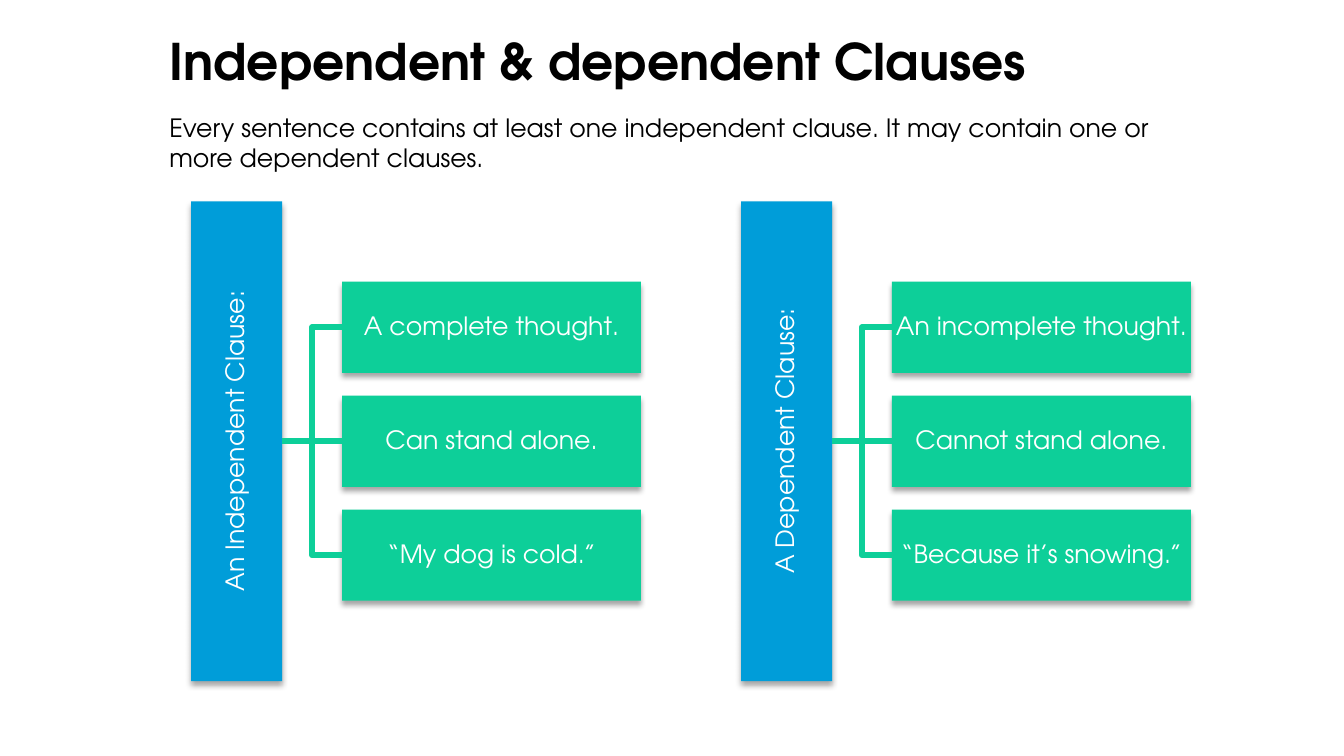
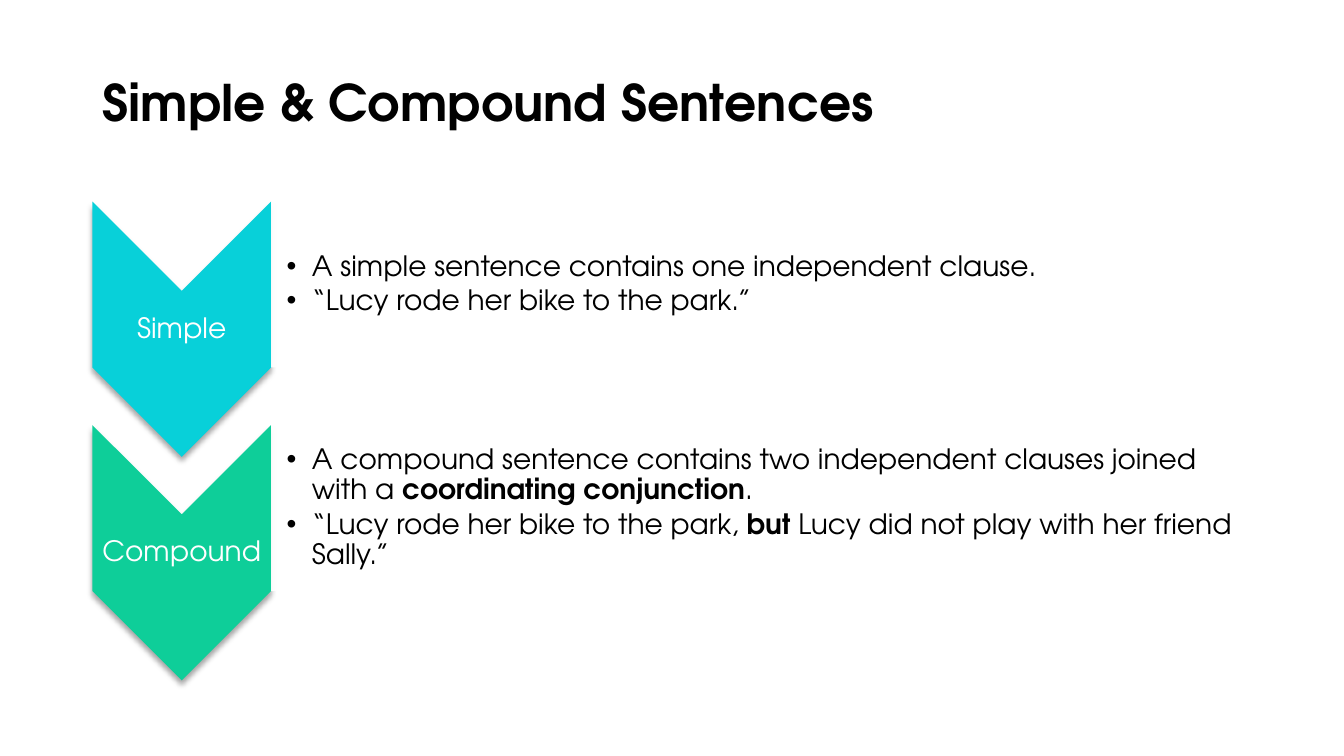
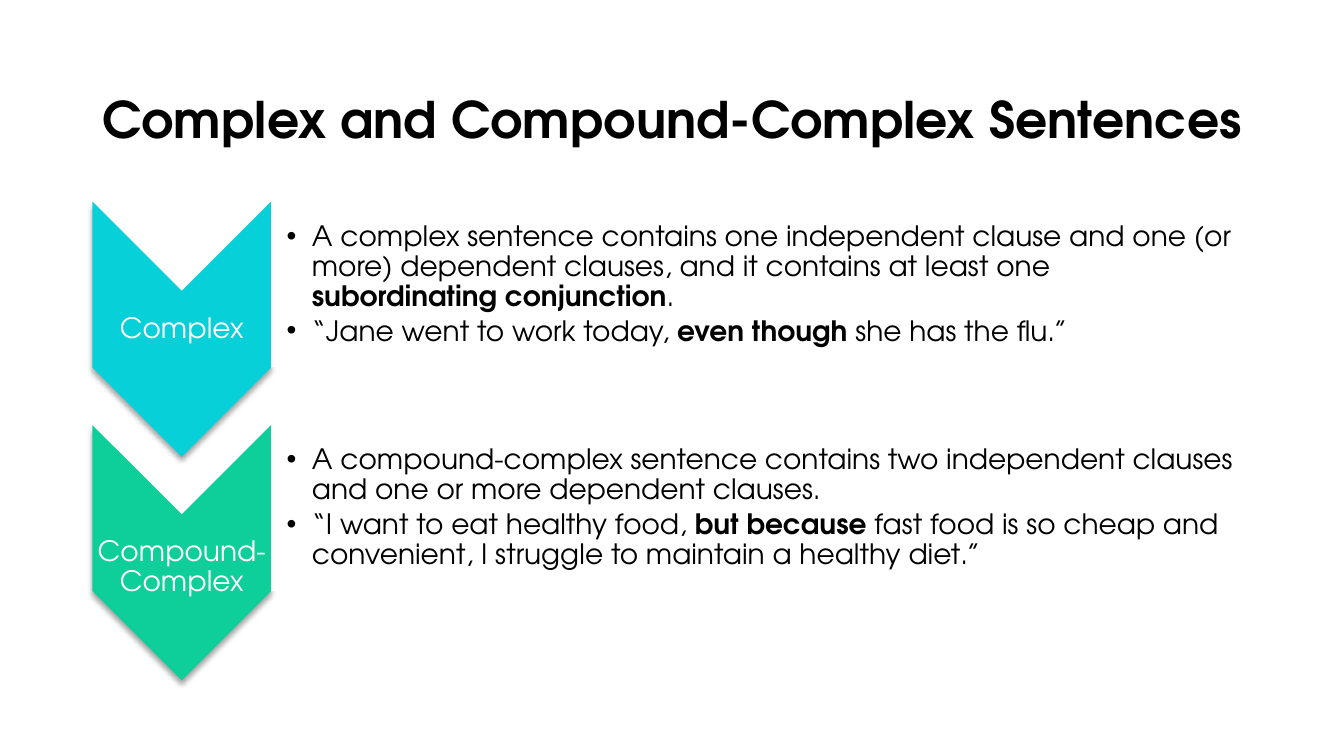
from lxml import etree
from pptx import Presentation
from pptx.dml.color import RGBColor
from pptx.enum import shapes, text
from pptx.oxml import ns
from pptx.util import Pt

BLACK = RGBColor(0x00, 0x00, 0x00)
WHITE = RGBColor(0xFF, 0xFF, 0xFF)
BLUE = RGBColor(0x00, 0x9D, 0xD9)
CYAN = RGBColor(0x08, 0xD0, 0xD9)
GREEN = RGBColor(0x0D, 0xCF, 0x99)
CHEVRON_GREEN = RGBColor(0x0E, 0xCE, 0x99)
FONT = "TeX Gyre Adventor"
TIGHT = (0.9, 0.9, 0.9, 0.9)
ROOMY = (7.2, 3.6, 7.2, 3.6)


def child(parent, tag, **attributes):
    element = etree.SubElement(parent, ns.qn(tag))
    for name, value in attributes.items():
        element.set(name, str(value))
    return element


def write(shape, *paragraphs, size=18, color=WHITE, bold=False, align=text.PP_ALIGN.CENTER,
          anchor=text.MSO_ANCHOR.MIDDLE, insets=TIGHT, spacing=0.9, bullets=False, upward=False):
    """Fill a shape with text; parts between ** marks are bold."""
    frame = shape.text_frame
    frame.word_wrap = True
    frame.vertical_anchor = anchor
    frame.margin_left, frame.margin_top, frame.margin_right, frame.margin_bottom = map(Pt, insets)
    if upward:
        frame._txBody.bodyPr.set("vert", "vert270")
    for index, content in enumerate(paragraphs):
        paragraph = frame.add_paragraph() if index else frame.paragraphs[0]
        paragraph.alignment = align
        paragraph.line_spacing = spacing
        if bullets:
            if index:
                paragraph.space_before = Pt(3)
            properties = paragraph._p.get_or_add_pPr()
            properties.set("marL", str(Pt(18)))
            properties.set("indent", str(-Pt(18)))
            child(child(properties, "a:buClr"), "a:srgbClr", val=color)
            child(properties, "a:buFont", typeface="Arial")
            child(properties, "a:buChar", char="•")
        for part, words in enumerate(content.split("**")):
            run = paragraph.add_run()
            run.text = words
            run.font.name = FONT
            run.font.size = Pt(size)
            run.font.bold = bold or part % 2 == 1
            run.font.color.rgb = color


def add_text(slide, box, *paragraphs, **fmt):
    write(slide.shapes.add_textbox(*map(Pt, box)), *paragraphs, **fmt)


def add_block(slide, kind, box, fill, turned=False, shaded=True):
    """Filled shape without outline; a turned one is rotated to fill its box."""
    left, top, width, height = box
    if turned:
        left, top = left + (width - height) / 2, top + (height - width) / 2
        width, height = height, width
    block = slide.shapes.add_shape(kind, *map(Pt, (left, top, width, height)))
    block.rotation = 90 if turned else 0
    block.fill.solid()
    block.fill.fore_color.rgb = fill
    block.line.fill.background()
    block.shadow.inherit = False
    if shaded:
        effects = block._element.spPr.find(ns.qn("a:effectLst"))
        shadow = child(effects, "a:outerShdw", blurRad=Pt(4), dist=Pt(3), dir=5400000,
                       algn="ctr", rotWithShape=0)
        child(child(shadow, "a:srgbClr", val=BLACK), "a:alpha", val=35000)
    return block


def add_title(slide, box, title):
    add_text(slide, box, title, size=36, color=BLACK, bold=True,
             align=text.PP_ALIGN.LEFT, insets=ROOMY)


def add_clause_tree(slide, box, clause, facts):
    """Vertical bar on the left, joined to a centred stack of facts."""
    left, top, width, height = box
    thick, branch, gap = 65.1, 42.7, 16.3
    bar = add_block(slide, shapes.MSO_SHAPE.RECTANGLE, (left, top, thick, height), BLUE)
    write(bar, clause, upward=True)

    fact_left = left + thick + branch
    stack_height = len(facts) * (thick + gap) - gap
    first_top = top + (height - stack_height) / 2
    middle = (len(facts) - 1) / 2
    for row, fact in enumerate(facts):
        fact_box = (fact_left, first_top + row * (thick + gap), left + width - fact_left, thick)
        fact_block = add_block(slide, shapes.MSO_SHAPE.RECTANGLE, fact_box, GREEN)
        write(fact_block, fact)

        route = shapes.MSO_CONNECTOR.STRAIGHT if row == middle else shapes.MSO_CONNECTOR.ELBOW
        link = slide.shapes.add_connector(route, 0, 0, 0, 0)
        link.begin_connect(bar, 3)
        link.end_connect(fact_block, 1)
        link.line.color.rgb = GREEN
        link.line.width = Pt(4.33)
        child(link._element.spPr, "a:effectLst")


def add_sentence_type(slide, box, label, points, fill, label_drop=0):
    """Chevron pointing down with its label, and a panel of bullets to its right."""
    left, top, width, height = box
    across = 127.6
    chevron = add_block(slide, shapes.MSO_SHAPE.CHEVRON, (left, top, across, height), fill,
                        turned=True)
    chevron.adjustments[0] = 0.5
    add_text(slide, (left, top + across / 2 + label_drop, across, height - across), label, size=20)

    panel = add_block(slide, shapes.MSO_SHAPE.ROUND_2_SAME_RECTANGLE,
                      (left + across, top, width - across, 118.5), WHITE,
                      turned=True, shaded=False)
    panel.adjustments[0] = 0.167
    color = panel._element.spPr.find(ns.qn("a:solidFill"))[0]
    child(color, "a:alpha", val=90000)
    add_text(slide, (left + across, top + 5.8, width - across - 5.8, 106.9), *points, size=20,
             color=BLACK, align=text.PP_ALIGN.LEFT, insets=(11.2, 0.9, 0.9, 0.9), bullets=True)


def clauses_slide(slide, title, intro, trees):
    add_title(slide, (113.8, 20, 756, 52), title)
    for column, (clause, facts) in enumerate(trees):
        add_clause_tree(slide, (136.5 + column * 392.8, 143.8, 321.4, 342.7), clause, facts)
    add_text(slide, (113.9, 76.6, 752.4, 51), intro, color=BLACK, align=text.PP_ALIGN.LEFT,
             anchor=text.MSO_ANCHOR.TOP, insets=ROOMY, spacing=1.0)


def sentences_slide(slide, title, title_box, kinds):
    add_title(slide, title_box, title)
    for row, (fill, kind) in enumerate(zip((CYAN, CHEVRON_GREEN), kinds)):
        add_sentence_type(slide, (66, 144 + row * 159.7, 828.2, 182.3), fill=fill, **kind)


def main():
    deck = Presentation()
    deck.slide_width, deck.slide_height = Pt(960), Pt(540)
    clauses, simple, complex_ = (deck.slides.add_slide(deck.slide_layouts[6]) for _ in range(3))

    clauses_slide(
        clauses, "Independent & dependent Clauses",
        "Every sentence contains at least one independent clause. "
        "It may contain one or more dependent clauses.",
        [("An Independent Clause:",
          ["A complete thought.", "Can stand alone.", "“My dog is cold.”"]),
         ("A Dependent Clause:",
          ["An incomplete thought.", "Cannot stand alone.", "“Because it’s snowing.”"])])

    sentences_slide(
        simple, "Simple & Compound Sentences", (66, 44.2, 828, 62),
        [dict(label="Simple", points=[
            "A simple sentence contains one independent clause.",
            "“Lucy rode her bike to the park.”"]),
         dict(label="Compound", points=[
             "A compound sentence contains two independent clauses joined with a "
             "**coordinating conjunction**.",
             "“Lucy rode her bike to the park, **but** Lucy did not play with her friend "
             "Sally.”"])])

    sentences_slide(
        complex_, "Complex and Compound-Complex Sentences", (66, 59.8, 841.7, 55.4),
        [dict(label="Complex", points=[
            "A complex sentence contains one independent clause and one (or more) dependent "
            "clauses, and it contains at least one **subordinating conjunction**.",
            "“Jane went to work today, **even though** she has the flu.”"]),
         dict(label="Compound-Complex", label_drop=10.5, points=[
             "A compound-complex sentence contains two independent clauses and one or more "
             "dependent clauses.",
             "“I want to eat healthy food, **but because** fast food is so cheap and "
             "convenient, I struggle to maintain a healthy diet.”"])])

    deck.save("out.pptx")


if __name__ == "__main__":
    main()
